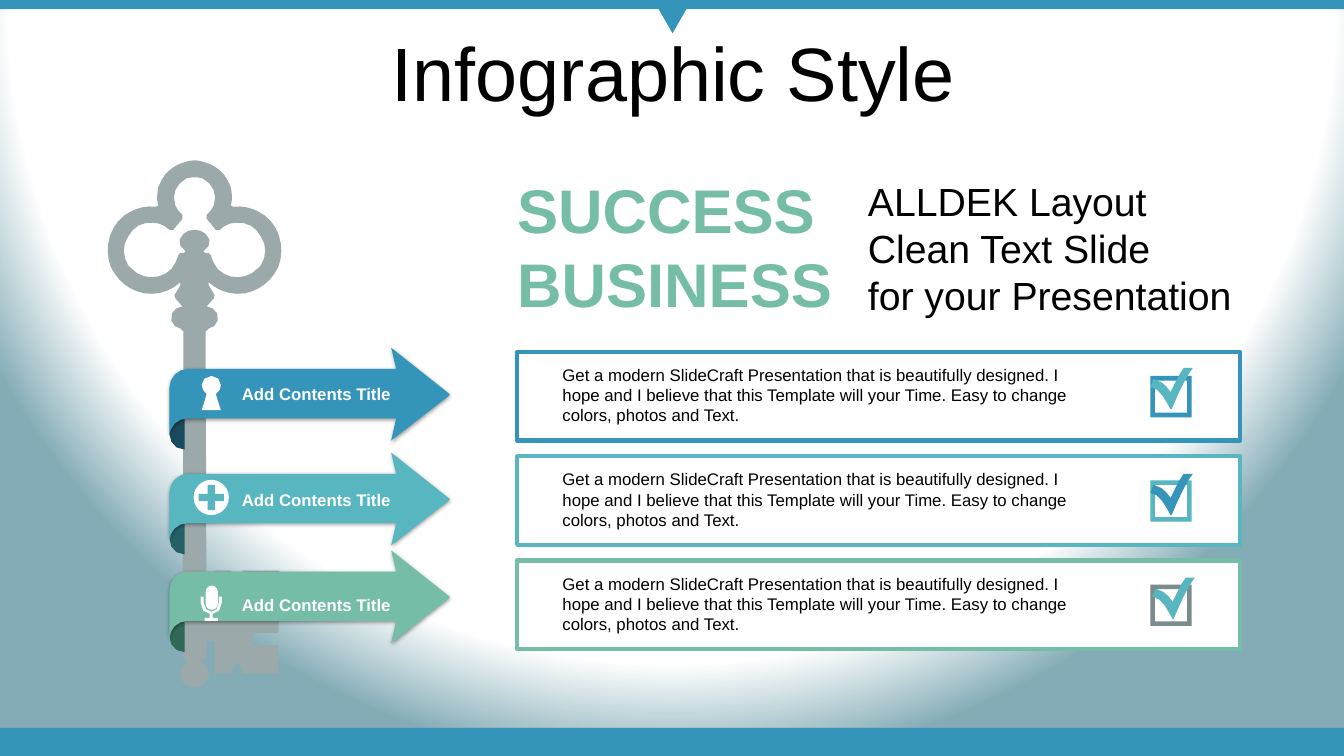
"""Build the key infographic slide with three ribbon arrows and check-box cards."""
from math import dist

from pptx import Presentation
from pptx.dml.color import RGBColor
from pptx.enum.shapes import MSO_SHAPE
from pptx.enum.text import MSO_ANCHOR, MSO_AUTO_SIZE, PP_ALIGN
from pptx.oxml import parse_xml
from pptx.oxml.ns import nsdecls, qn
from pptx.util import Inches, Pt

COLORS = {
    "blue": "3494BA", "teal": "58B6C0", "green": "75BDA7", "key": "9BA9AA",
    "blue fold": "1A4A5D", "teal fold": "266066", "green fold": "316857",
    "gray": "7A8C8E", "white": "FFFFFF", "black": "000000", "haze": "84ACB6",
}
WIDTH, HEIGHT = 13.33, 7.5

TITLE = "Infographic Style"
SLOGAN = "SUCCESS BUSINESS"
INTRO = ["ALLDEK Layout", "Clean Text Slide", "for your Presentation"]
LABEL = "Add Contents Title"
CARD_TEXT = ("Get a modern SlideCraft Presentation that is beautifully designed. "
             "I hope and I believe that this Template will your Time. "
             "Easy to change colors, photos and Text.")
ROWS = [
    {"color": "blue", "ribbon": 3.45, "box": "blue", "tick": "teal", "tick at": (11.41, 3.65)},
    {"color": "teal", "ribbon": 4.49, "box": "teal", "tick": "blue", "tick at": (11.41, 4.7)},
    {"color": "green", "ribbon": 5.46, "box": "gray", "tick": "teal", "tick at": (11.43, 5.73)},
]
CARD_TOP, ROW_PITCH = 3.49, 1.035

KEY_AXIS = 1.93
KEY_EDGE = [
    (1.93, 1.59), (1.96, 1.59, 2, 1.6, 2.03, 1.61), (2.07, 1.62, 2.11, 1.64, 2.14, 1.66),
    (2.17, 1.68, 2.19, 1.7, 2.22, 1.73), (2.25, 1.77, 2.27, 1.81, 2.29, 1.86),
    (2.3, 1.92, 2.31, 1.98, 2.29, 2.04), (2.31, 2.05),
    (2.43, 2.04, 2.53, 2.07, 2.63, 2.14), (2.78, 2.26, 2.83, 2.47, 2.76, 2.65),
    (2.69, 2.79, 2.58, 2.88, 2.43, 2.91), (2.29, 2.93, 2.17, 2.89, 2.07, 2.8),
    (2.07, 2.83), (2.13, 2.93), (2.12, 2.96), (2.05, 3.04), (2.11, 3.06),
    (2.15, 3.08, 2.17, 3.13, 2.16, 3.18), (2.15, 3.22, 2.11, 3.26, 2.07, 3.26),
    (2.04, 3.29), (2.05, 6.52), (2.01, 6.55), (2.02, 6.58),
    (2.08, 6.62, 2.09, 6.7, 2.05, 6.76), (2.02, 6.8, 1.98, 6.82, 1.93, 6.82),
]
KEY_HOLE = [
    (1.93, 2.28), (1.97, 2.28, 2.01, 2.29, 2.04, 2.32), (2.08, 2.35, 2.09, 2.4, 2.07, 2.44),
    (2.03, 2.48), (2.02, 2.5), (2.04, 2.51), (2.07, 2.51), (2.09, 2.53),
    (2.1, 2.58, 2.13, 2.63, 2.16, 2.67), (2.27, 2.78, 2.45, 2.78, 2.56, 2.66),
    (2.59, 2.63), (2.64, 2.54, 2.65, 2.44, 2.59, 2.35), (2.54, 2.25, 2.45, 2.2, 2.34, 2.21),
    (2.28, 2.21, 2.22, 2.24, 2.18, 2.28), (2.14, 2.28), (2.05, 2.17), (2.05, 2.13),
    (2.08, 2.1, 2.11, 2.08, 2.12, 2.04), (2.16, 1.93, 2.11, 1.82, 2.01, 1.77),
    (1.98, 1.76, 1.95, 1.76, 1.93, 1.76),
]
KEY_TEETH = [
    (2.13, 6.68), (2.13, 6.36), (2.05, 6.36), (2.05, 5.97), (2.13, 5.97), (2.13, 5.66),
    (2.29, 5.66), (2.32, 5.74), (2.38, 5.74), (2.41, 5.66), (2.77, 5.66), (2.77, 5.94),
    (2.51, 5.94), (2.51, 6.06), (2.77, 6.06), (2.76, 6.28), (2.51, 6.28), (2.51, 6.4),
    (2.76, 6.4), (2.76, 6.68), (2.41, 6.68), (2.38, 6.59), (2.32, 6.59), (2.29, 6.68),
]
FOLD = [(1.83, 0.7), (1.83, 1.01), (1.74, 1.01, 1.68, 0.94, 1.68, 0.85),
        (1.68, 0.77, 1.74, 0.7, 1.83, 0.7)]
RIBBON = [(3.88, 0), (4.46, 0.46), (4.46, 0.47), (3.88, 0.92), (3.93, 0.7), (1.86, 0.7),
          (1.76, 0.7, 1.68, 0.78, 1.68, 0.88), (1.68, 0.4),
          (1.68, 0.3, 1.76, 0.21, 1.86, 0.21), (3.93, 0.21)]
TICK = [(0.33, 0), (0.42, 0), (0.34, 0.11, 0.27, 0.27, 0.21, 0.41), (0.2, 0.41),
        (0.15, 0.33, 0.1, 0.2, 0, 0.19), (0.03, 0.11), (0.13, 0.14, 0.15, 0.17, 0.2, 0.24),
        (0.25, 0.14, 0.27, 0.09, 0.33, 0)]
KEYHOLE_ICON = [(2.1, 3.73), (2.15, 3.73, 2.19, 3.77, 2.19, 3.82),
                (2.19, 3.85, 2.18, 3.88, 2.15, 3.9), (2.14, 3.91), (2.19, 4.07), (2, 4.07),
                (2.05, 3.91), (2.04, 3.9), (2.02, 3.88, 2, 3.85, 2, 3.82),
                (2, 3.77, 2.04, 3.73, 2.1, 3.73)]
MIC_STAND = [(2.17, 5.92), (2.2, 5.92), (2.2, 5.98), (2.2, 6.04, 2.16, 6.09, 2.11, 6.09),
             (2.11, 6.13), (2.16, 6.13), (2.16, 6.16), (2.03, 6.16), (2.03, 6.13), (2.08, 6.13),
             (2.08, 6.09), (2.03, 6.09, 1.99, 6.04, 1.99, 5.98), (1.99, 5.92), (2.02, 5.92),
             (2.02, 5.98), (2.02, 6.03, 2.06, 6.07, 2.1, 6.07),
             (2.14, 6.07, 2.17, 6.03, 2.17, 5.98)]


def trace(steps, dx=0, dy=0):
    """Turn line steps (x, y) and curve steps (six numbers) into points."""
    points = []
    for step in steps:
        if len(step) == 2:
            points.append(step)
            continue
        start, *controls = points[-1], step[:2], step[2:4], step[4:]
        pieces = 1 + int(dist(start, controls[-1]) / 0.08)
        for k in range(1, pieces + 1):
            t = k / pieces
            weights = ((1 - t) ** 3, 3 * t * (1 - t) ** 2, 3 * t * t * (1 - t), t ** 3)
            points.append(tuple(sum(w * p[axis] for w, p in zip(weights, (start, *controls)))
                                for axis in (0, 1)))
    return [(x + dx, y + dy) for x, y in points]


def mirrored(half):
    points = trace(half)
    return points + [(2 * KEY_AXIS - x, y) for x, y in points[-2:0:-1]]


def paint(shape, fill, line=None):
    shape.shadow.inherit = False
    shape.fill.solid()
    shape.fill.fore_color.rgb = RGBColor.from_string(COLORS[fill])
    if line:
        shape.line.color.rgb = RGBColor.from_string(COLORS[line])
        shape.line.width = Pt(3)
    else:
        shape.line.fill.background()
    return shape


def add_preset(kind, box, fill, line=None):
    return paint(slide.shapes.add_shape(kind, *map(Inches, box)), fill, line)


def add_outline(fill, *contours):
    scaled = [[(x * 1000, y * 1000) for x, y in contour] for contour in contours]
    builder = slide.shapes.build_freeform(*scaled[0][0], scale=Inches(1) / 1000)
    for index, contour in enumerate(scaled):
        if index:
            builder.move_to(*contour[0])
        builder.add_line_segments(contour[1:], close=True)
    return paint(builder.convert_to_shape(), fill)


def add_text(box, lines, size, color, bold=False, frame_format=None, paragraph_format=None):
    frame = slide.shapes.add_textbox(*map(Inches, box)).text_frame
    for name, value in {"word_wrap": True, **(frame_format or {})}.items():
        setattr(frame, name, value)
    for index, line in enumerate(lines):
        paragraph = frame.add_paragraph() if index else frame.paragraphs[0]
        for name, value in (paragraph_format or {}).items():
            setattr(paragraph, name, value)
        font = paragraph.add_run().font
        paragraph.runs[0].text = line
        for name, value in {"name": "Arial", "size": Pt(size), "bold": bold}.items():
            setattr(font, name, value)
        font.color.rgb = RGBColor.from_string(COLORS[color])


deck = Presentation()
deck.slide_width, deck.slide_height = Inches(WIDTH), Inches(HEIGHT)
slide = deck.slides.add_slide(deck.slide_layouts[6])

slide.background.fill.solid()
plain = slide.element.find(".//" + qn("p:bgPr")).find(qn("a:solidFill"))
stops = "".join(f'<a:gs pos="{pos}000"><a:srgbClr val="{COLORS[name]}"/></a:gs>'
                for pos, name in ((0, "white"), (86, "white"), (100, "haze")))
plain.getparent().replace(plain, parse_xml(
    f'<a:gradFill {nsdecls("a")} rotWithShape="1"><a:gsLst>{stops}</a:gsLst><a:path path="circle">'
    '<a:fillToRect l="50000" t="-80000" r="50000" b="180000"/></a:path></a:gradFill>'))

add_preset(MSO_SHAPE.RECTANGLE, (0, 7.22, WIDTH, 0.28), "blue")
add_preset(MSO_SHAPE.RECTANGLE, (0, 0, WIDTH, 0.09), "blue")
add_preset(MSO_SHAPE.ISOSCELES_TRIANGLE, (6.48, 0, 0.38, 0.33), "blue").rotation = 180

GROW = {"auto_size": MSO_AUTO_SIZE.SHAPE_TO_FIT_TEXT}
MIDDLE = {"vertical_anchor": MSO_ANCHOR.MIDDLE}
add_text((0.35, 0.37, 12.66, 0.79), [TITLE], 54, "black", frame_format=MIDDLE,
         paragraph_format={"alignment": PP_ALIGN.CENTER, "line_spacing": 0.9})
add_text((8.51, 1.7, 3.89, 1.51), INTRO, 28, "black", frame_format={**GROW, **MIDDLE})
add_text((5.03, 1.66, 3.35, 1.58), [SLOGAN], 44, "green", True, GROW,
         {"alignment": PP_ALIGN.JUSTIFY})

add_outline("key", KEY_TEETH)
add_outline("key", mirrored(KEY_EDGE), mirrored(KEY_HOLE))

for index, row in enumerate(ROWS):
    shift = index * ROW_PITCH
    add_outline(row["color"] + " fold", trace(FOLD, dy=row["ribbon"]))
    ribbon = add_outline(row["color"], trace(RIBBON, dy=row["ribbon"]))
    ribbon.element.spPr.find(qn("a:effectLst")).append(parse_xml(
        f'<a:outerShdw {nsdecls("a")} blurRad="{Pt(3)}" dist="{Pt(1)}" dir="5400000">'
        f'<a:srgbClr val="{COLORS["black"]}"><a:alpha val="40000"/></a:srgbClr></a:outerShdw>'))
    add_text((2.3, 3.76 + index * 1.045, 1.73, 0.3), [LABEL], 12, "white", True, GROW)
    add_preset(MSO_SHAPE.RECTANGLE, (5.13, CARD_TOP + shift, 7.17, 0.88), "white", row["color"])
    add_preset(MSO_SHAPE.FRAME, (11.41, CARD_TOP + 0.24 + shift, 0.41, 0.41),
               row["box"]).adjustments[0] = 0.11
    add_outline(row["tick"], trace(TICK, *row["tick at"]))
    add_text((5.48, CARD_TOP + 0.08 + shift, 5.45, 0.71), [CARD_TEXT], 12, "black",
             frame_format=GROW)

add_outline("white", trace(KEYHOLE_ICON))
add_preset(MSO_SHAPE.OVAL, (1.92, 4.76, 0.35, 0.35), "white")
add_preset(MSO_SHAPE.CROSS, (1.97, 4.81, 0.25, 0.25), "teal").adjustments[0] = 0.36
add_outline("white", trace(MIC_STAND))
add_preset(MSO_SHAPE.ROUNDED_RECTANGLE, (2.04, 5.81, 0.12, 0.24), "white").adjustments[0] = 0.5

deck.save("out.pptx")
